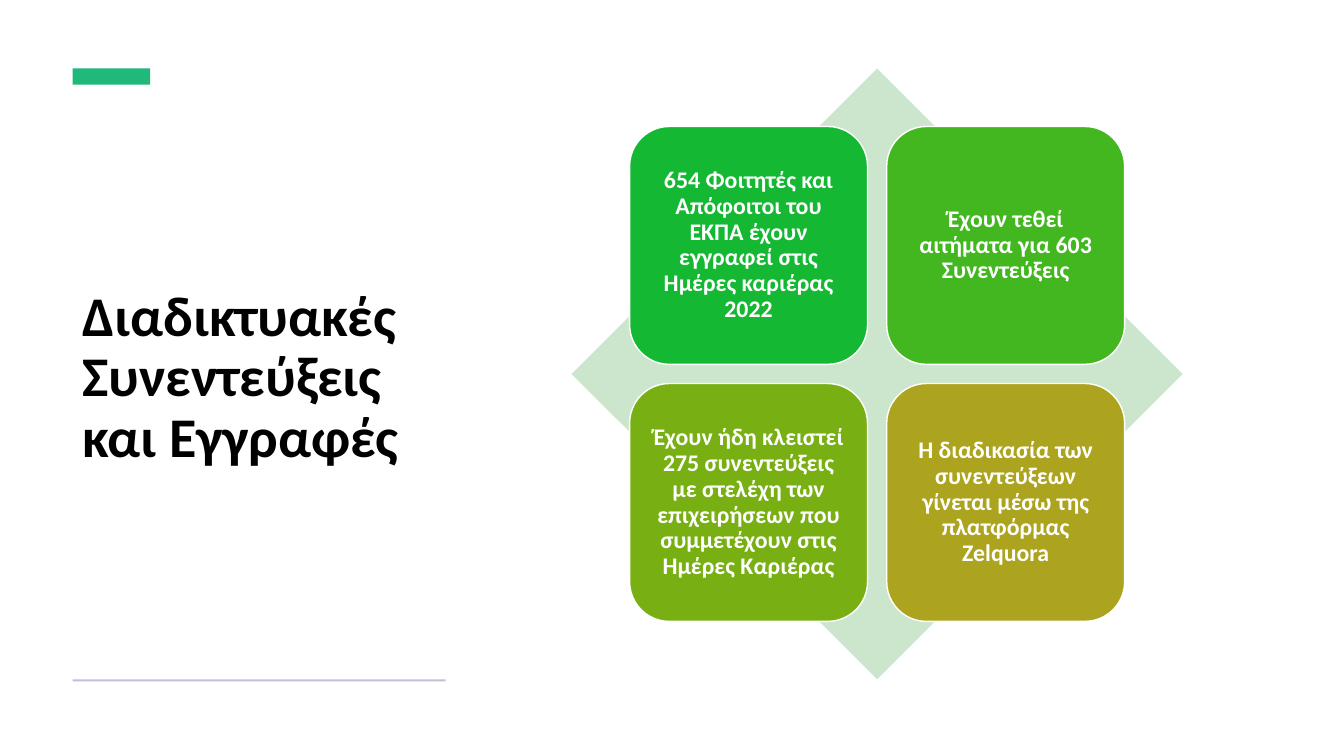
import pptx
import pptx.util
import pptx.dml.color
import pptx.enum.shapes
import pptx.enum.text
from dataclasses import dataclass

Inches = pptx.util.Inches
SHAPE = pptx.enum.shapes.MSO_SHAPE
ALIGN = pptx.enum.text.PP_ALIGN


@dataclass(frozen=True)
class Theme:
    font: str = "Calibri"
    title_size: int = 40
    card_size: int = 17
    background: str = "FFFFFF"
    title: str = "000000"
    card_text: str = "FFFFFF"
    card_line: str = "FFFFFF"
    accent: str = "21B87C"
    rule: str = "BDC0DB"
    diamond: str = "CCE6CE"
    cards: tuple = ("14B833", "43B720", "78B013", "ACA31E")


THEME = Theme()
TITLE = "Διαδικτυακές Συνεντεύξεις και Εγγραφές"
CARDS = (
    "654 Φοιτητές και Απόφοιτοι του ΕΚΠΑ έχουν εγγραφεί στις Ημέρες καριέρας 2022",
    "Έχουν τεθεί αιτήματα για 603 Συνεντεύξεις",
    "Έχουν ήδη κλειστεί 275 συνεντεύξεις με στελέχη των επιχειρήσεων "
    "που συμμετέχουν στις Ημέρες Καριέρας",
    "Η διαδικασία των συνεντεύξεων γίνεται μέσω της πλατφόρμας Zelquora",
)


def rgb(color):
    return pptx.dml.color.RGBColor.from_string(color)


def add_shape(slide, kind, left, top, width, height, fill, line=None):
    sp = slide.shapes.add_shape(
        kind, Inches(left), Inches(top), Inches(width), Inches(height))
    sp.shadow.inherit = False
    sp.fill.solid()
    sp.fill.fore_color.rgb = rgb(fill)
    if line:
        sp.line.color.rgb = rgb(line)
        sp.line.width = pptx.util.Pt(1)
    else:
        sp.line.fill.background()
    return sp


def write(tf, text, size, color, align):
    tf.word_wrap = True
    tf.vertical_anchor = pptx.enum.text.MSO_ANCHOR.MIDDLE
    p = tf.paragraphs[0]
    p.alignment = align
    p.line_spacing = 0.9
    r = p.add_run()
    r.text = text
    r.font.name = THEME.font
    r.font.size = pptx.util.Pt(size)
    r.font.bold = True
    r.font.color.rgb = rgb(color)


def add_title_panel(slide, left, top, width, height):
    # Accent bar above, thin rule below
    add_shape(slide, SHAPE.RECTANGLE, left, top, 0.77, 0.16, THEME.accent)
    add_shape(slide, SHAPE.RECTANGLE, left, top + height - 0.02, width, 0.02, THEME.rule)
    # Title between them
    box = slide.shapes.add_textbox(
        Inches(left), Inches(top + 0.37), Inches(width), Inches(height - 0.67))
    write(box.text_frame, TITLE, THEME.title_size, THEME.title, ALIGN.LEFT)


def add_card_matrix(slide, left, top, size):
    # Diamond behind the cards
    add_shape(slide, SHAPE.DIAMOND, left, top, size, size, THEME.diamond)
    # Two by two cards, centred on the diamond
    card, gap = 2.36, 0.19
    margin = (size - 2 * card - gap) / 2
    for i, (text, color) in enumerate(zip(CARDS, THEME.cards)):
        row, col = divmod(i, 2)
        sp = add_shape(slide, SHAPE.ROUNDED_RECTANGLE,
                       left + margin + col * (card + gap),
                       top + margin + row * (card + gap),
                       card, card, color, THEME.card_line)
        tf = sp.text_frame
        tf.margin_left = tf.margin_right = Inches(0.07)
        tf.margin_top = tf.margin_bottom = Inches(0.07)
        write(tf, text, THEME.card_size, THEME.card_text, ALIGN.CENTER)


def main():
    prs = pptx.Presentation()
    prs.slide_width, prs.slide_height = Inches(13.33), Inches(7.5)
    slide = prs.slides.add_slide(prs.slide_layouts[6])
    slide.background.fill.solid()
    slide.background.fill.fore_color.rgb = rgb(THEME.background)
    add_title_panel(slide, 0.72, 0.68, 3.7, 6.08)
    add_card_matrix(slide, 5.67, 0.68, 6.06)
    prs.save("out.pptx")


if __name__ == "__main__":
    main()
